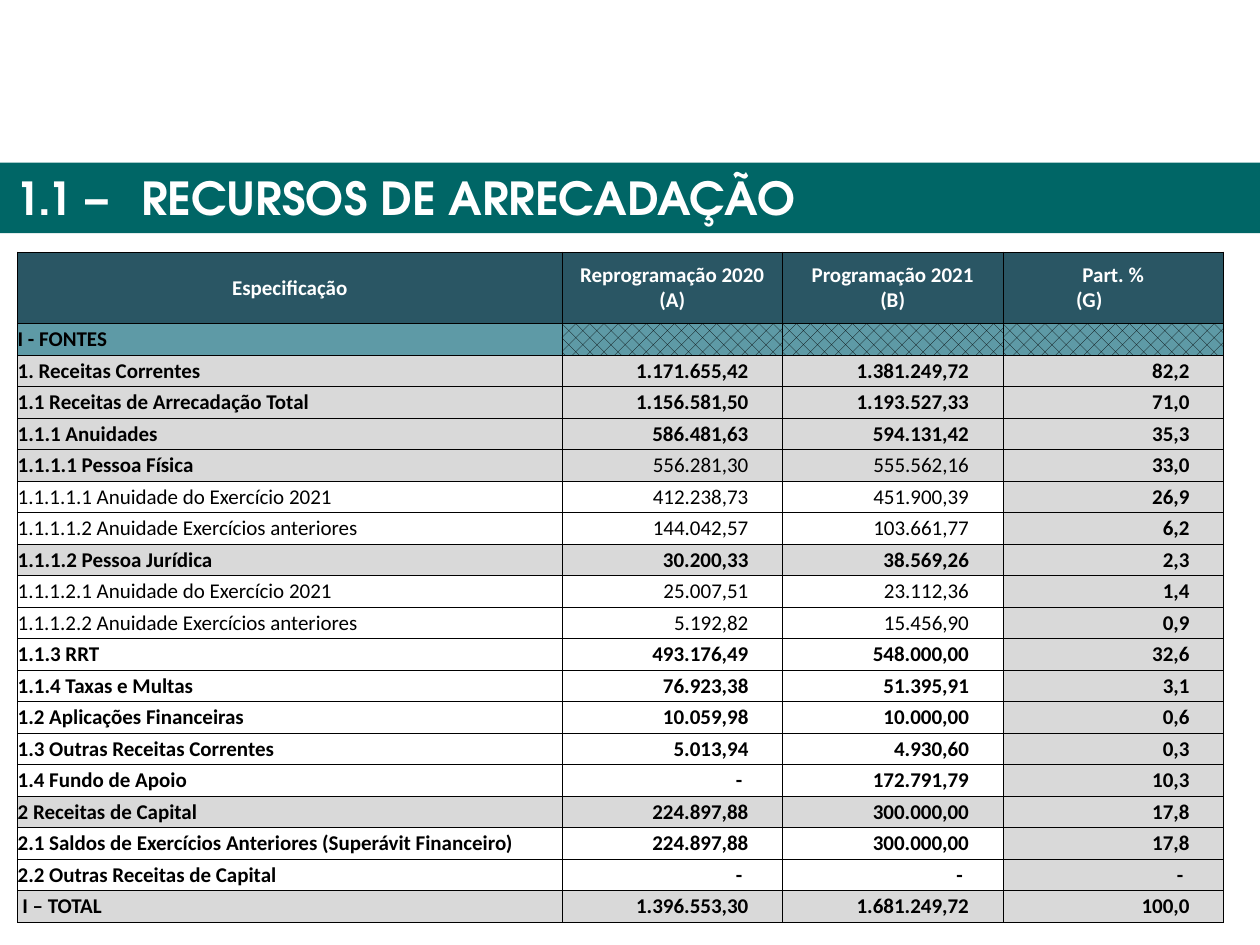
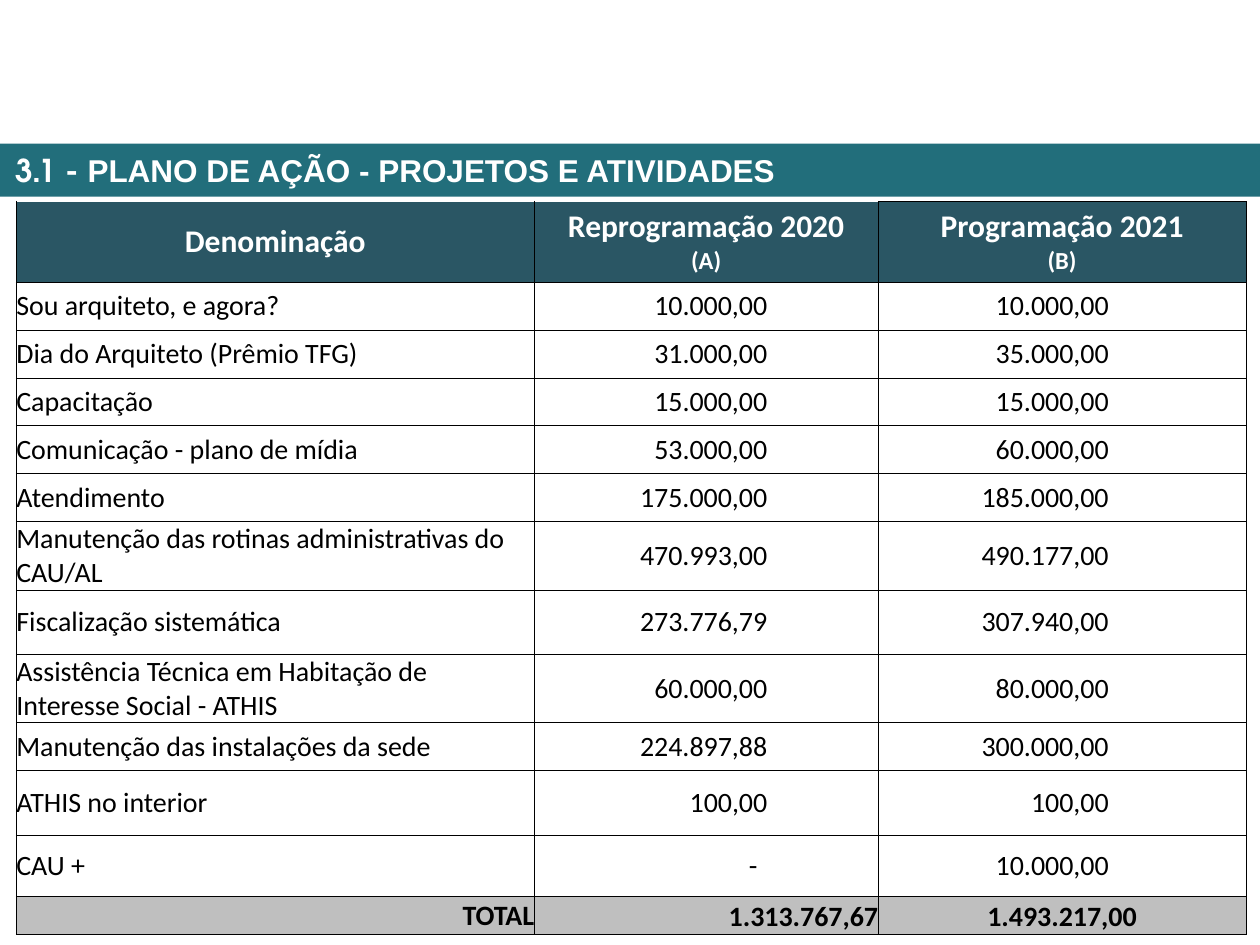
from lxml.etree import SubElement
from pptx import Presentation
from pptx.dml.color import RGBColor
from pptx.enum.dml import MSO_PATTERN
from pptx.enum.shapes import MSO_SHAPE
from pptx.enum.text import MSO_ANCHOR, PP_ALIGN
from pptx.oxml.ns import qn
from pptx.util import Inches, Pt

TITLE_FONT = "TeX Gyre Adventor"
TABLE_FONT = "Calibri"
WHITE, BLACK = "FFFFFF", "000000"
HEADER_FILL = "2A5664"
SECTION_FILL = "5E9AA6"
GRAY = "D9D9D9"
TOTAL_GRAY = "BFBFBF"
LEFT, CENTER, RIGHT = PP_ALIGN.LEFT, PP_ALIGN.CENTER, PP_ALIGN.RIGHT

color = RGBColor.from_string
presentation = Presentation()
presentation.slide_width = Inches(10)
presentation.slide_height = Inches(7.5)


def add_table_slide(title_runs, title_size, band_fill, band_top, band_height,
                    left, top, column_widths, row_heights):
    """Add a slide with a full-width title band and an empty table; return the table."""
    slide = presentation.slides.add_slide(presentation.slide_layouts[6])
    band = slide.shapes.add_shape(MSO_SHAPE.RECTANGLE, 0, Inches(band_top),
                                  Inches(10), Inches(band_height))
    band.shadow.inherit = False
    band.fill.solid()
    band.fill.fore_color.rgb = color(band_fill)
    band.line.fill.background()
    frame = band.text_frame
    frame.margin_left = frame.margin_right = Inches(0.12)
    frame.margin_top = frame.margin_bottom = Inches(0.06)
    paragraph = frame.paragraphs[0]
    paragraph.alignment = LEFT
    paragraph.font.size = Pt(title_size)
    paragraph.font.bold = True
    paragraph.font.color.rgb = color(WHITE)
    for text, font_name in title_runs:
        run = paragraph.add_run()
        run.text = text
        run.font.name = font_name

    table = slide.shapes.add_table(
        len(row_heights), len(column_widths), Inches(left), Inches(top),
        Inches(sum(column_widths)), Inches(sum(row_heights))).table
    table.first_row = table.horz_banding = False
    for column, width in zip(table.columns, column_widths):
        column.width = Inches(width)
    for row, height in zip(table.rows, row_heights):
        row.height = Inches(height)
    return table


def write_cell(cell, text, sizes, fill=None, text_color=BLACK, bold=False, alignment=LEFT,
               right_margin=0, anchor=MSO_ANCHOR.MIDDLE, borders="LRTB"):
    """Write one paragraph per line of text, each with its own size; border and fill the cell."""
    cell.margin_left = cell.margin_top = cell.margin_bottom = 0
    cell.margin_right = Inches(right_margin)
    cell.vertical_anchor = anchor
    for side in borders:
        line = SubElement(cell._tc.get_or_add_tcPr(), qn(f"a:ln{side}"), w=str(Pt(0.5)))
        SubElement(SubElement(line, qn("a:solidFill")), qn("a:srgbClr"), val=BLACK)
    if fill:
        cell.fill.solid()
        cell.fill.fore_color.rgb = color(fill)
    else:
        cell.fill.background()
    cell.text = text
    for paragraph, size in zip(cell.text_frame.paragraphs, sizes):
        paragraph.alignment = alignment
        paragraph.font.name = TABLE_FONT
        paragraph.font.size = Pt(size)
        paragraph.font.bold = bold
        paragraph.font.color.rgb = color(text_color)
        if not text:
            paragraph._p.get_or_add_endParaRPr().set("sz", str(size * 100))


# Slide 1: revenue sources
revenue_headers = ["Especificação", "Reprogramação 2020\n(A)", "Programação 2021\n(B)",
                   "Part. %\n(G)"]
revenue_rows = [
    ("1. Receitas Correntes", "1.171.655,42", "1.381.249,72", "82,2"),
    ("1.1 Receitas de Arrecadação Total", "1.156.581,50", "1.193.527,33", "71,0"),
    ("1.1.1 Anuidades", "586.481,63", "594.131,42", "35,3"),
    ("1.1.1.1 Pessoa Física", "556.281,30", "555.562,16", "33,0"),
    ("1.1.1.1.1 Anuidade do Exercício 2021", "412.238,73", "451.900,39", "26,9"),
    ("1.1.1.1.2 Anuidade Exercícios anteriores", "144.042,57", "103.661,77", "6,2"),
    ("1.1.1.2 Pessoa Jurídica", "30.200,33", "38.569,26", "2,3"),
    ("1.1.1.2.1 Anuidade do Exercício 2021", "25.007,51", "23.112,36", "1,4"),
    ("1.1.1.2.2 Anuidade Exercícios anteriores", "5.192,82", "15.456,90", "0,9"),
    ("1.1.3 RRT", "493.176,49", "548.000,00", "32,6"),
    ("1.1.4 Taxas e Multas", "76.923,38", "51.395,91", "3,1"),
    ("1.2 Aplicações Financeiras", "10.059,98", "10.000,00", "0,6"),
    ("1.3 Outras Receitas Correntes", "5.013,94", "4.930,60", "0,3"),
    ("1.4 Fundo de Apoio", "-", "172.791,79", "10,3"),
    ("2 Receitas de Capital", "224.897,88", "300.000,00", "17,8"),
    ("2.1 Saldos de Exercícios Anteriores (Superávit Financeiro)",
     "224.897,88", "300.000,00", "17,8"),
    ("2.2 Outras Receitas de Capital", "-", "-", "-"),
    (" I – TOTAL", "1.396.553,30", "1.681.249,72", "100,0"),
]
gray_codes = {"1.", "1.1", "1.1.1", "1.1.1.1", "1.1.1.2", "2", "I"}

table = add_table_slide([("1.1 – \tRECURSOS DE ARRECADAÇÃO", TITLE_FONT)], 26, "006666",
                        1.29, 0.56, 0.14, 2, [4.32, 1.75, 1.75, 1.75],
                        [0.57] + [0.25] * (len(revenue_rows) + 1))
for column, header in enumerate(revenue_headers):
    write_cell(table.cell(0, column), header, [12, 12], HEADER_FILL, WHITE, True, CENTER)
# The (G) mark sits left of the column's middle.
share_mark = table.cell(0, 3).text_frame.paragraphs[1]
share_mark.alignment = LEFT
share_mark._p.get_or_add_pPr().set("marL", str(Inches(0.58)))

write_cell(table.cell(1, 0), "I - FONTES", [12], SECTION_FILL, bold=True)
for column in range(1, 4):
    cell = table.cell(1, column)
    write_cell(cell, "", [12])
    cell.fill.patterned()
    cell.fill.pattern = MSO_PATTERN.PERCENT_25
    cell.fill.fore_color.rgb = color(BLACK)
    cell.fill.back_color.rgb = color(SECTION_FILL)

for row, (label, *values) in enumerate(revenue_rows, start=2):
    code = label.split()[0]
    is_detail = code.count(".") == 4
    row_fill = GRAY if code in gray_codes else WHITE
    write_cell(table.cell(row, 0), label, [12], row_fill, bold=not is_detail)
    for column, value in enumerate(values, start=1):
        is_share = column == 3
        write_cell(table.cell(row, column), value, [12], GRAY if is_share else row_fill,
                   bold=is_share or not (is_detail or code == "1.1.1.1"),
                   alignment=RIGHT, right_margin=0.32 if value == "-" else 0.27)

# Slide 2: action plan
plan_headers = ["Denominação", "Reprogramação 2020\n(A)", "Programação 2021\n(B)"]
plan_rows = [
    ("Sou arquiteto, e agora?", "10.000,00", "10.000,00"),
    ("Dia do Arquiteto (Prêmio TFG)", "31.000,00", "35.000,00"),
    ("Capacitação", "15.000,00", "15.000,00"),
    ("Comunicação - plano de mídia", "53.000,00", "60.000,00"),
    ("Atendimento", "175.000,00", "185.000,00"),
    ("Manutenção das rotinas administrativas do CAU/AL", "470.993,00", "490.177,00"),
    ("Fiscalização sistemática", "273.776,79", "307.940,00"),
    ("Assistência Técnica em Habitação de Interesse Social - ATHIS",
     "60.000,00", "80.000,00"),
    ("Manutenção das instalações da sede", "224.897,88", "300.000,00"),
    ("ATHIS no interior", "100,00", "100,00"),
    ("CAU +", "-", "10.000,00"),
]
plan_totals = [("TOTAL", RIGHT, MSO_ANCHOR.MIDDLE), ("1.313.767,67", RIGHT, MSO_ANCHOR.BOTTOM),
               ("1.493.217,00", CENTER, MSO_ANCHOR.BOTTOM)]

table = add_table_slide(
    [("3.1 - ", TITLE_FONT), ("PLANO DE AÇÃO - PROJETOS E ATIVIDADES", "Arial")], 18, "226E7B",
    1.14, 0.42, 0.13, 1.6, [4.11, 2.73, 2.92],
    [0.64] + [0.38] * 5 + [0.51] * 3 + [0.38, 0.51, 0.49, 0.3])
for column, header in enumerate(plan_headers):
    write_cell(table.cell(0, column), header, [18, 14], HEADER_FILL, WHITE, True, CENTER,
               borders="LRTB" if column == 2 else "LRB")
for row, (label, *values) in enumerate(plan_rows, start=1):
    write_cell(table.cell(row, 0), label, [16])
    for column, (value, margin) in enumerate(zip(values, (0.88, 1.09)), start=1):
        write_cell(table.cell(row, column), value, [16], alignment=RIGHT,
                   right_margin=0.96 if value == "-" else margin)
for column, (text, alignment, anchor) in enumerate(plan_totals):
    write_cell(table.cell(len(plan_rows) + 1, column), text, [16], TOTAL_GRAY, bold=True,
               alignment=alignment, anchor=anchor)

presentation.save("out.pptx")
